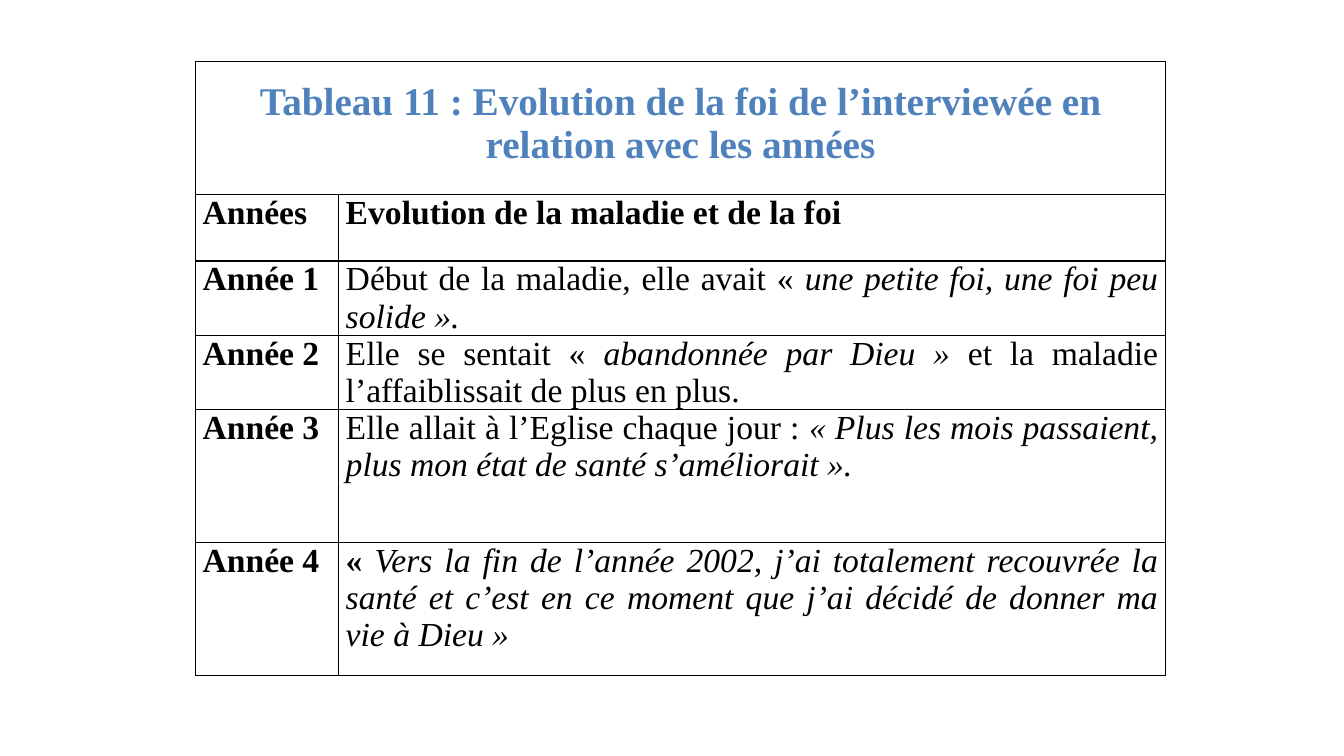
"""Builds the slide with the table of the interviewee's faith over the years."""
from dataclasses import dataclass
from typing import Optional

from lxml.etree import SubElement
from pptx import Presentation
from pptx.dml.color import RGBColor
from pptx.enum.text import PP_ALIGN
from pptx.oxml.ns import qn
from pptx.util import Inches, Pt


@dataclass(frozen=True)
class Theme:
    """Colours, font and sizes of the slide."""
    font: str = "Times New Roman"
    title_color: str = "4F81BD"
    text_color: str = "000000"
    border_color: str = "000000"
    title_size: int = 28
    text_size: int = 24
    border_width: int = 1


@dataclass(frozen=True)
class Span:
    """A run of text with its emphasis."""
    text: str
    bold: bool = False
    italic: bool = False


@dataclass(frozen=True)
class Row:
    """A table row: its height in grid rows, its label and its text."""
    units: int
    label: str
    spans: tuple[Span, ...]


THEME = Theme()
WIDTH, HEIGHT = Inches(13.33), Inches(7.5)
LEFT_PCT, TOP_PCT = 14.55, 8.13
COL_PCTS = (10.65, 61.52)
ROW_PCT = 8.8
TITLE_UNITS = 2
TITLE_INSET_PCT = 2.46
SIDE_INSET_PCT = 0.53

TITLE = Span("Tableau 11 : Evolution de la foi de l’interviewée en relation avec les années", bold=True)
ROWS = (
    Row(1, "Années", (Span("Evolution de la maladie et de la foi", bold=True),)),
    Row(1, "Année 1", (
        Span("Début de la maladie, elle avait « "),
        Span("une petite foi, une foi peu solide ».", italic=True))),
    Row(1, "Année 2", (
        Span("Elle se sentait «"),
        Span(" abandonnée par Dieu » ", italic=True),
        Span("et la maladie l’affaiblissait de plus en plus."))),
    Row(2, "Année 3", (
        Span("Elle allait à l’Eglise chaque jour :"),
        Span(" « Plus les mois passaient, plus mon état de santé s’améliorait ».", italic=True))),
    Row(2, "Année 4", (
        Span("« ", bold=True),
        Span("Vers la fin de l’année 2002, j’ai totalement recouvrée la santé et c’est en ce "
             "moment que j’ai décidé de donner ma vie à Dieu »", italic=True))),
)


def across(pct: float) -> int:
    """Return a share of the slide's width."""
    return round(WIDTH * pct / 100)


def down(pct: float) -> int:
    """Return a share of the slide's height."""
    return round(HEIGHT * pct / 100)


def frame_cell(cell) -> None:
    """Give a cell its borders, insets and empty fill."""
    cell.margin_left = cell.margin_right = across(SIDE_INSET_PCT)
    cell.margin_top = cell.margin_bottom = 0
    tc_pr = cell._tc.get_or_add_tcPr()
    for side in ("a:lnL", "a:lnR", "a:lnT", "a:lnB"):
        ln = SubElement(tc_pr, qn(side), w=str(Pt(THEME.border_width)))
        fill = SubElement(ln, qn("a:solidFill"))
        SubElement(fill, qn("a:srgbClr"), val=THEME.border_color)
    cell.fill.background()


def write_cell(cell, spans: tuple[Span, ...], align: Optional[PP_ALIGN] = None,
               size: int = THEME.text_size, color: str = THEME.text_color) -> None:
    """Write the runs of a cell."""
    p = cell.text_frame.paragraphs[0]
    p.alignment = align
    for span in spans:
        r = p.add_run()
        r.text = span.text
        r.font.name = THEME.font
        r.font.size = Pt(size)
        r.font.bold = span.bold
        r.font.italic = span.italic
        r.font.color.rgb = RGBColor.from_string(color)


def add_faith_table(s) -> None:
    """Add the table with its title row and its year rows."""
    units = (TITLE_UNITS, *(row.units for row in ROWS))
    table = s.shapes.add_table(
        len(units), len(COL_PCTS), across(LEFT_PCT), down(TOP_PCT),
        across(sum(COL_PCTS)), down(ROW_PCT * sum(units))).table
    table.first_row = table.horz_banding = False
    for col, pct in zip(table.columns, COL_PCTS):
        col.width = across(pct)
    for table_row, count in zip(table.rows, units):
        table_row.height = down(ROW_PCT * count)
    for cell in table.iter_cells():
        frame_cell(cell)

    title = table.cell(0, 0)
    title.merge(table.cell(0, 1))
    title.margin_top = down(TITLE_INSET_PCT)
    write_cell(title, (TITLE,), PP_ALIGN.CENTER, THEME.title_size, THEME.title_color)
    for i, row in enumerate(ROWS, start=1):
        write_cell(table.cell(i, 0), (Span(row.label, bold=True),))
        write_cell(table.cell(i, 1), row.spans, PP_ALIGN.JUSTIFY)


def main() -> None:
    """Build and save the presentation."""
    prs = Presentation()
    prs.slide_width, prs.slide_height = WIDTH, HEIGHT
    s = prs.slides.add_slide(prs.slide_layouts[6])
    add_faith_table(s)
    prs.save("out.pptx")


if __name__ == "__main__":
    main()
